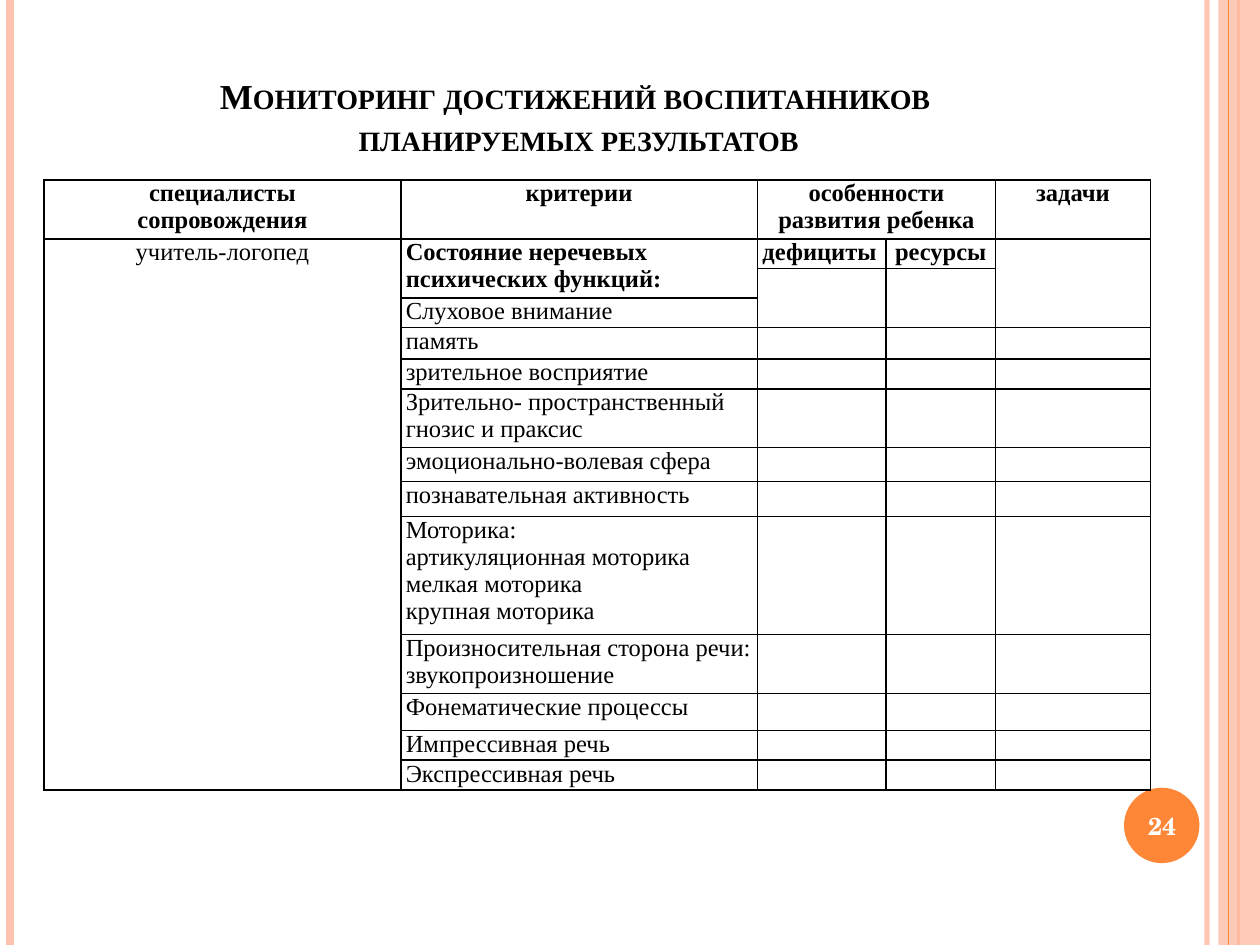
import pptx
import pptx.dml.color
import pptx.enum.shapes
import pptx.enum.text
import pptx.oxml
import pptx.oxml.ns
import pptx.util
from lxml import etree

Cm, Pt = pptx.util.Cm, pptx.util.Pt
qn = pptx.oxml.ns.qn
Align = pptx.enum.text.PP_ALIGN
Anchor = pptx.enum.text.MSO_ANCHOR
ShapeType = pptx.enum.shapes.MSO_SHAPE

PEACH, ORANGE, BLACK, WHITE = "FEC3AE", "FE8637", "000000", "FFFFFF"
SERIF = "Times New Roman"
SLIDE_HEIGHT = 19.05
COLUMN_WIDTHS = [7.19, 7.19, 2.59, 2.21, 3.12]
ROW_HEIGHTS = [1.11, 0.56, 0.52, 0.55, 0.64, 0.6, 1.1, 0.68, 0.71, 2.22,
               1.11, 0.75, 0.6, 0.6]
HEADINGS = {0: "специалисты\nсопровождения", 1: "критерии",
            2: "особенности развития ребенка", 4: "задачи"}
CRITERIA = [
    "Слуховое внимание",
    "память",
    "зрительное восприятие",
    "Зрительно- пространственный гнозис и праксис",
    "эмоционально-волевая сфера",
    "познавательная активность",
    "Моторика:\nартикуляционная моторика\nмелкая моторика\nкрупная моторика",
    "Произносительная сторона речи:\nзвукопроизношение",
    "Фонематические процессы",
    "Импрессивная речь",
    "Экспрессивная речь",
]
# Merged areas: first row, first column, last row, last column
MERGES = [(0, 2, 0, 3), (1, 0, 13, 0), (1, 1, 2, 1),
          (1, 4, 3, 4), (2, 2, 3, 2), (2, 3, 3, 3)]


def set_color(color_format, color, opacity=100):
    color_format.rgb = pptx.dml.color.RGBColor.from_string(color)


def set_fill(fill, color, opacity=100):
    fill.solid()
    fill.fore_color.rgb = pptx.dml.color.RGBColor.from_string(color)
    if opacity < 100:
        for element in fill._xPr.iter(qn("a:srgbClr")):
            etree.SubElement(element, qn("a:alpha"), val=str(opacity * 1000))


def set_format(target, values):
    for name, value in values.items():
        setattr(target, name, value)


def write_paragraph(paragraph, text, color=BLACK, align=Align.LEFT, **font):
    paragraph.alignment = align
    run = paragraph.add_run()
    run.text = text
    set_format(run.font, font)
    set_fill(run.font.fill, color)
    return run


def add_vertical_line(slide, x, color, width, opacity=100):
    line = slide.shapes.add_connector(
        pptx.enum.shapes.MSO_CONNECTOR.STRAIGHT,
        Cm(x), 0, Cm(x), Cm(SLIDE_HEIGHT))
    set_fill(line.line.fill, color, opacity)
    line.line.width = Pt(width)
    etree.SubElement(line._element.spPr, qn("a:effectLst"))


def add_plain_shape(slide, kind, left, top, width, height, color, opacity=100):
    shape = slide.shapes.add_shape(
        kind, Cm(left), Cm(top), Cm(width), Cm(height))
    shape.shadow.inherit = False
    shape.line.fill.background()
    set_fill(shape.fill, color, opacity)


def add_text(slide, left, top, width, height, anchor, text, **style):
    box = slide.shapes.add_textbox(Cm(left), Cm(top), Cm(width), Cm(height))
    set_format(box.text_frame, {"word_wrap": True, "vertical_anchor": anchor})
    paragraph = box.text_frame.paragraphs[0]
    for index, line in enumerate(text.split("\n")):
        if index:
            paragraph.add_line_break()
        run = write_paragraph(paragraph, line, align=Align.CENTER, **style)
    return paragraph


def style_cell(cell):
    set_format(cell, {"margin_left": Cm(0.1), "margin_right": Cm(0.1),
                      "margin_top": 0, "margin_bottom": 0})
    properties = cell._tc.get_or_add_tcPr()
    for side in ("lnL", "lnR", "lnT", "lnB"):
        border = etree.SubElement(
            properties, qn(f"a:{side}"), w=str(Pt(1)))
        fill = etree.SubElement(border, qn("a:solidFill"))
        etree.SubElement(fill, qn("a:srgbClr"), val=BLACK)
    cell.fill.background()
    # Small empty paragraphs keep blank rows from growing
    end = cell.text_frame.paragraphs[0]._p.get_or_add_endParaRPr()
    end.set("sz", "1400")


def write_cell(cell, text, align=Align.LEFT, bold=False):
    frame = cell.text_frame
    for index, line in enumerate(text.split("\n")):
        paragraph = frame.add_paragraph() if index else frame.paragraphs[0]
        write_paragraph(paragraph, line, align=align,
                        name=SERIF, size=Pt(14), bold=bold)


def add_monitoring_table(slide):
    table = slide.shapes.add_table(
        len(ROW_HEIGHTS), len(COLUMN_WIDTHS), Cm(0.89), Cm(3.63),
        Cm(sum(COLUMN_WIDTHS)), Cm(sum(ROW_HEIGHTS))).table
    set_format(table, {"first_row": False, "horz_banding": False})
    for column, width in zip(table.columns, COLUMN_WIDTHS):
        column.width = Cm(width)
    for row, height in zip(table.rows, ROW_HEIGHTS):
        row.height = Cm(height)
    for cell in table.iter_cells():
        style_cell(cell)
    for top, left, bottom, right in MERGES:
        table.cell(top, left).merge(table.cell(bottom, right))

    for column, heading in HEADINGS.items():
        write_cell(table.cell(0, column), heading, Align.CENTER, bold=True)
    write_cell(table.cell(1, 0), "учитель-логопед", Align.CENTER)
    write_cell(table.cell(1, 1), "Состояние неречевых психических функций:",
               bold=True)
    write_cell(table.cell(1, 2), "дефициты", bold=True)
    write_cell(table.cell(1, 3), "ресурсы", Align.CENTER, bold=True)
    for row, criterion in enumerate(CRITERIA, start=3):
        write_cell(table.cell(row, 1), criterion)


def main():
    presentation = pptx.Presentation()
    set_format(presentation, {"slide_width": Cm(25.4),
                              "slide_height": Cm(SLIDE_HEIGHT)})
    slide = presentation.slides.add_slide(presentation.slide_layouts[6])

    # Side stripes and number badge
    add_vertical_line(slide, 24.33, PEACH, 3, opacity=93)
    add_vertical_line(slide, 0.2, PEACH, 4.5)
    add_vertical_line(slide, 24.97, ORANGE, 1.5)
    add_plain_shape(slide, ShapeType.RECTANGLE, 24.56, 0, 0.84, SLIDE_HEIGHT,
                    PEACH, opacity=87)
    add_vertical_line(slide, 24.77, ORANGE, 0.75)
    add_plain_shape(slide, ShapeType.OVAL, 22.66, 15.88, 1.52, 1.52, ORANGE)

    # Title in small capitals
    title = add_text(
        slide, 1.3, 0.76, 20.73, 2.57, Anchor.BOTTOM,
        "Мониторинг достижений воспитанников \nпланируемых результатов",
        name=SERIF, size=Pt(20), bold=True)
    title.line_spacing = 1.0
    for run in title.runs:
        run.font._element.set("cap", "small")

    # Slide number
    add_text(slide, 22.58, 15.93, 1.7, 1.45, Anchor.MIDDLE, "24", color=WHITE,
             name="TeX Gyre Schola", size=Pt(14), bold=True)

    add_monitoring_table(slide)
    presentation.save("out.pptx")


if __name__ == "__main__":
    main()
